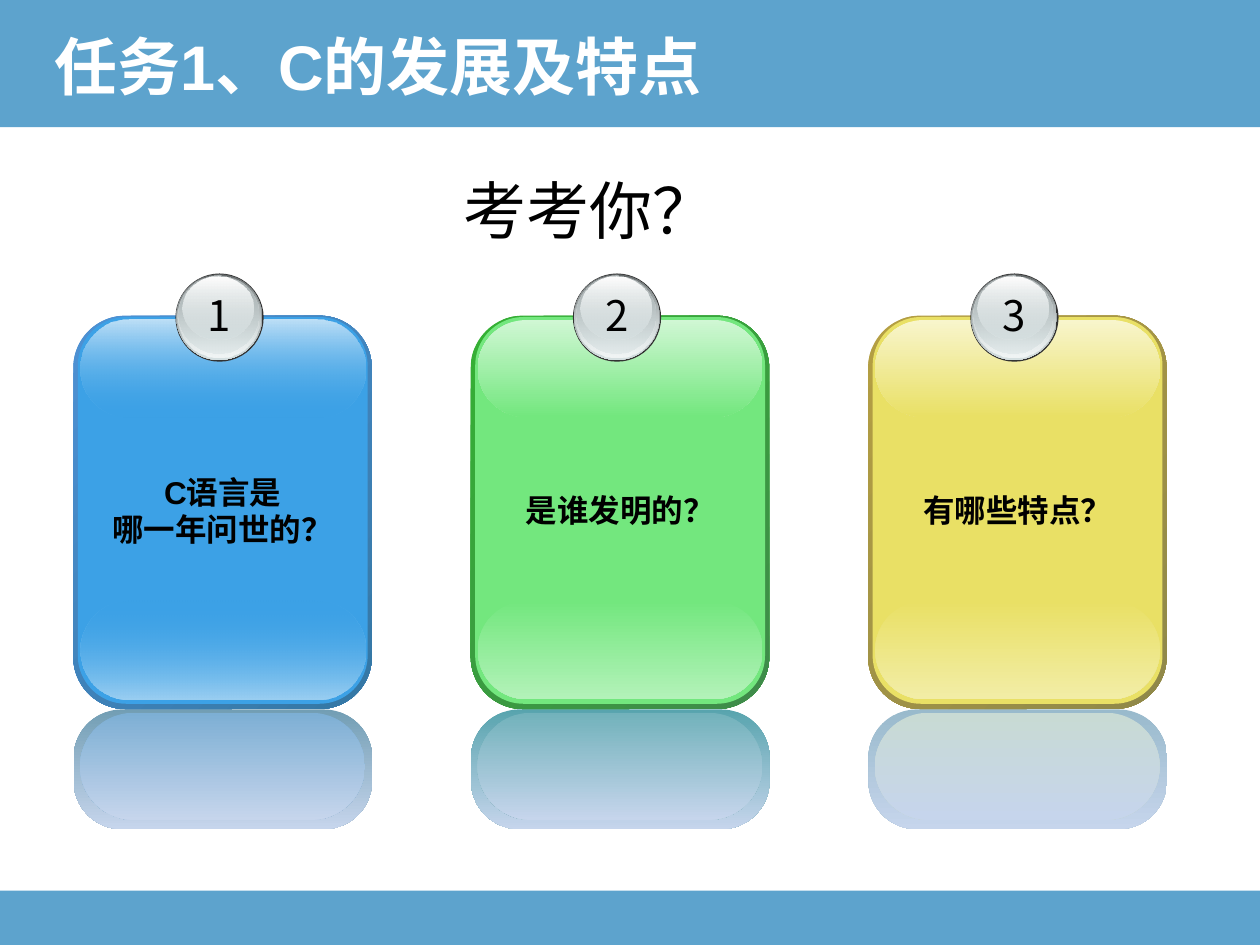
"""Build a quiz slide with three glossy numbered cards."""
from pptx import Presentation
from pptx.dml.color import RGBColor
from pptx.enum.shapes import MSO_SHAPE as Shape
from pptx.enum.text import MSO_ANCHOR as Anchor, PP_ALIGN as Align
from pptx.oxml.ns import qn
from pptx.util import Pt
from lxml.etree import SubElement

CJK = "Noto Sans CJK SC"


def add_filled(kind, left, top, width, height, stops, angle=90, radius=None):
    shape = page.shapes.add_shape(kind, Pt(left), Pt(top), Pt(width), Pt(height))
    shape.shadow.inherit = False
    shape.line.fill.background()
    if radius is not None:
        shape.adjustments[0] = radius
    if len(stops) == 1:
        shape.fill.solid()
        targets = [shape.fill.fore_color]
    else:
        shape.fill.gradient()
        shape.fill.gradient_angle = 360 - angle
        targets = [stop.color for stop in shape.fill.gradient_stops]
    for target, (color, _) in zip(targets, stops):
        target.rgb = RGBColor.from_string(color)
    for node, (_, alpha) in zip(list(shape.element.iter(qn("a:srgbClr"))), stops):
        if alpha < 100:
            SubElement(node, qn("a:alpha")).set("val", str(alpha * 1000))
    return shape


def write(shape, lines, size, font, color, bold=False, align=Align.CENTER, wrap=True):
    frame = shape.text_frame
    frame.word_wrap = wrap
    for index, line in enumerate(lines):
        para = frame.add_paragraph() if index else frame.paragraphs[0]
        para.alignment = align
        span = para.add_run()
        span.text = line
        span.font.size = Pt(size)
        span.font.bold = bold
        span.font.name = font
        span.font.color.rgb = RGBColor.from_string(color)
        SubElement(span.font._element, qn("a:ea")).set("typeface", CJK)


deck = Presentation()
deck.slide_width, deck.slide_height = Pt(720), Pt(540)
page = deck.slides.add_slide(deck.slide_layouts[6])

for top, height in [(0, 72.7), (509, 31)]:
    add_filled(Shape.RECTANGLE, 0, top, 720, height, [("358CC1", 80)])

title = page.shapes.add_textbox(Pt(23.8), Pt(12.2), Pt(535), Pt(51))
write(title, ["任务1、C的发展及特点"], 36, "Arial", "FFFFFF", True, Align.LEFT)
question = page.shapes.add_textbox(Pt(208), Pt(94.3), Pt(258), Pt(51))
write(question, ["考考你？"], 36, CJK, "000000")

cards = [
    (["C语言是", "哪一年问世的？"], "3CA1E6", ("4E91D4", "3477A4"),
     "BEE0F7", "9BCFF2", ("729EB4", "7DAFD4"), 0),
    (["是谁发明的？"], "73E77E", ("34B034", "3F8B4A"),
     "D0F7D4", "B3F2B9", ("58A4AE", "72B2BB"), 100),
    (["有哪些特点？"], "E9E065", ("B59F43", "8F8849"),
     "F8F5CC", "F2EDA6", ("99BACC", "C8DAD4"), 100),
]
badge_layers = [
    (0, 0, 50.4, 50.4, [("333333", 100)]),
    (0.5, 0.4, 49, 49, [("636869", 100), ("D6E1E2", 100)]),
    (1.2, 0.6, 47.5, 47.5, [("D6E1E2", 0), ("F1F5F5", 100)]),
    (1.8, 1, 45.4, 44.6, [("AAB2B3", 100), ("D6E1E2", 48)]),
    (4.3, 2, 40.3, 36, [("FFFFFF", 100), ("D6E1E2", 38)]),
]
pitch = 227.1

for index, (lines, face, rim, shine, glow, mirror, fade) in enumerate(cards):
    left = 41.9 + index * pitch
    add_filled(Shape.ROUNDED_RECTANGLE, left, 180.4, 170.6, 224.8,
               [(color, 100) for color in rim], 45, 0.175)
    body = add_filled(Shape.ROUNDED_RECTANGLE, left + 2.6, 181.2, 165.6, 221,
                      [(face, 100)], radius=0.167)
    body.text_frame.vertical_anchor = Anchor.MIDDLE
    write(body, lines, 18, "Arial", "000000", True, wrap=False)
    add_filled(Shape.ROUNDED_RECTANGLE, left + 4, 343.4, 162.8, 56.2,
               [(face, fade), (glow, 100)], radius=0.5)
    add_filled(Shape.ROUNDED_RECTANGLE, left + 4, 182.9, 162.8, 55.5,
               [(shine, 100), (face, fade)], radius=0.5)
    add_filled(Shape.ROUNDED_RECTANGLE, left + 0.2, 405.4, 170.6, 68.4,
               [(mirror[0], 100), ("C6D5EC", 100)], radius=0.404)
    add_filled(Shape.ROUNDED_RECTANGLE, left + 3.8, 407.3, 162.8, 61.2,
               [(mirror[1], 100), ("C6D5EC", 100)], radius=0.5)
    for shift, drop, width, height, stops in badge_layers:
        add_filled(Shape.OVAL, left + 58.4 + shift, 156.3 + drop, width, height, stops)
    number = page.shapes.add_textbox(Pt(left + 69.9), Pt(162), Pt(26.6), Pt(36))
    write(number, [str(index + 1)], 24, CJK, "000000", wrap=False)

deck.save("out.pptx")
